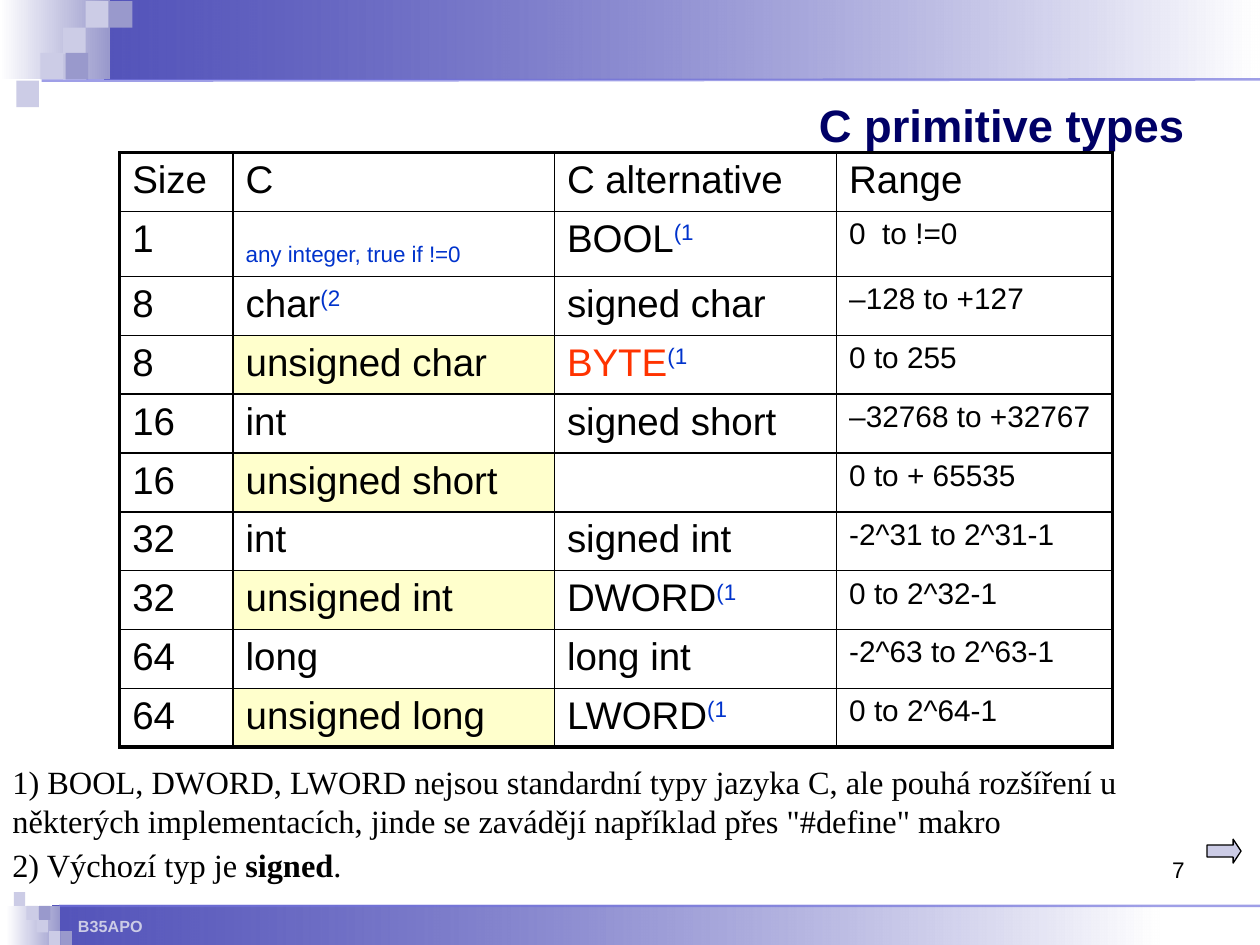
import lxml.etree
import pptx
import pptx.dml.color
import pptx.enum.shapes
import pptx.enum.text
import pptx.oxml.ns
import pptx.util

Inches = pptx.util.Inches
Align = pptx.enum.text.PP_ALIGN
Anchor = pptx.enum.text.MSO_ANCHOR
Preset = pptx.enum.shapes.MSO_SHAPE

COLORS = {
    "ink": "000000", "paper": "FFFFFF", "title": "000066", "note": "0033CC",
    "alert": "FF3300", "highlight": "FFFFCC", "navy": "000099",
    "lilac": "9999CC", "pale": "CCCCE6", "rule": "7272DC",
}
TOP_SQUARES = [
    (0.5, 0.22, "pale"), (0.68, 0.01, "pale"), (0.87, 0.01, "lilac"),
    (0.32, 0.42, "pale"), (0.52, 0.42, "lilac"), (0.13, 0.64, "pale"),
]
BOTTOM_SQUARES = [
    (0.29, 7.29, "pale"), (0.39, 7.39, "pale"), (0.48, 7.39, "lilac"),
    (0.21, 7.19, "pale"), (0.31, 7.19, "lilac"), (0.11, 7.08, "pale"),
]
TYPE_ROWS = [
    ("Size", "C", "C alternative", "Range"),
    ("1", "any integer, true if !=0", "BOOL(1", "0  to !=0"),
    ("8", "char(2", "signed char", "–128 to +127"),
    ("8", "unsigned char", "BYTE(1", "0 to 255"),
    ("16", "int", "signed short", "–32768 to +32767"),
    ("16", "unsigned short", "", "0 to + 65535"),
    ("32", "int", "signed int", "-2^31 to 2^31-1"),
    ("32", "unsigned int", "DWORD(1", "0 to 2^32-1"),
    ("64", "long", "long int", "-2^63 to 2^63-1"),
    ("64", "unsigned long", "LWORD(1", "0 to 2^64-1"),
]
COLUMN_WIDTHS = [0.9, 2.55, 2.24, 2.19]


def rgb(name):
    return pptx.dml.color.RGBColor.from_string(COLORS[name])


def add_element(parent, tag, **attributes):
    return lxml.etree.SubElement(parent, pptx.oxml.ns.qn(tag), attributes)


def make_translucent(color_parent):
    color = next(color_parent.iter(pptx.oxml.ns.qn("a:srgbClr")))
    add_element(color, "a:alpha", val="67000")


class SlideBuilder:
    """Holds the style and the current slide, and adds each kind of element."""

    def __init__(self, presentation):
        self.font = "Arial"
        self.slide = presentation.slides.add_slide(presentation.slide_layouts[5])

    def format_run(self, run, size, color="ink", bold=False, font=None, baseline=0):
        run.font.name = font or self.font
        run.font.size = pptx.util.Pt(size)
        run.font.bold = bold
        run.font.color.rgb = rgb(color)
        if baseline:
            run.font._element.set("baseline", str(baseline * 1000))

    def title(self, text, left, top, width, height):
        shape = self.slide.shapes.title
        shape.left, shape.top = Inches(left), Inches(top)
        shape.width, shape.height = Inches(width), Inches(height)
        frame = shape.text_frame
        frame.text = text
        frame.auto_size = pptx.enum.text.MSO_AUTO_SIZE.NONE
        frame.vertical_anchor = Anchor.MIDDLE
        frame.paragraphs[0].alignment = Align.RIGHT
        self.format_run(frame.paragraphs[0].runs[0], 25.9, "title", True)

    def shape(self, left, top, width, height, fill, preset=Preset.RECTANGLE):
        shape = self.slide.shapes.add_shape(
            preset, Inches(left), Inches(top), Inches(width), Inches(height))
        shape.shadow.inherit = False
        shape.fill.solid()
        shape.fill.fore_color.rgb = rgb(fill)
        shape.line.fill.background()
        return shape

    def gradient(self, left, top, width, height, start, end, translucent=False):
        shape = self.shape(left, top, width, height, start)
        shape.fill.gradient()
        shape.fill.gradient_angle = 0
        for stop, color, position in zip(shape.fill.gradient_stops, (start, end), (0, 1)):
            stop.color.rgb = rgb(color)
            stop.position = position
        if translucent:
            make_translucent(shape._element.spPr)

    def squares(self, squares, width, height):
        for left, top, fill in squares:
            self.shape(left, top, width, height, fill)

    def rule(self, left, start_y, right, end_y):
        line = self.slide.shapes.add_connector(
            pptx.enum.shapes.MSO_CONNECTOR.STRAIGHT,
            Inches(left), Inches(start_y), Inches(right), Inches(end_y))
        line.line.color.rgb = rgb("rule")
        line.line.width = pptx.util.Pt(1.5)
        make_translucent(line._element.spPr)
        add_element(line._element.spPr, "a:effectLst")

    def text(self, left, top, width, height, pieces, size, color="ink", font=None,
             align=Align.LEFT, anchor=Anchor.TOP, wrap=True):
        box = self.slide.shapes.add_textbox(
            Inches(left), Inches(top), Inches(width), Inches(height))
        frame = box.text_frame
        frame.word_wrap = wrap
        frame.vertical_anchor = anchor
        paragraph = frame.paragraphs[0]
        paragraph.alignment = align
        for text, bold in pieces:
            run = paragraph.add_run()
            run.text = text
            self.format_run(run, size, color, bold, font)
        return frame

    def borders(self, cell, thick_sides):
        properties = cell._tc.get_or_add_tcPr()
        for side in "LRTB":
            width = 2.25 if side in thick_sides else 1
            line = add_element(properties, "a:ln" + side, w=str(pptx.util.Pt(width)))
            fill = add_element(line, "a:solidFill")
            add_element(fill, "a:srgbClr", val=COLORS["ink"])

    def cell(self, cell, text, size):
        name, mark, number = text.partition("(")
        paragraph = cell.text_frame.paragraphs[0]
        spacing = add_element(paragraph._p.get_or_add_pPr(), "a:spcBef")
        add_element(spacing, "a:spcPct", val="20000")
        if name.startswith("any"):
            styles = [(name, "note", -25)]
        else:
            styles = [(name, "alert" if name == "BYTE" else "ink", 0),
                      (mark + number, "note", 30)]
        for piece, color, baseline in styles:
            if piece:
                run = paragraph.add_run()
                run.text = piece
                self.format_run(run, size, color, baseline=baseline)

    def table(self, left, top, rows, widths, row_height):
        table = self.slide.shapes.add_table(
            len(rows), len(widths), Inches(left), Inches(top),
            Inches(sum(widths)), Inches(row_height * len(rows))).table
        table.first_row = table.horz_banding = False
        for column, width in zip(table.columns, widths):
            column.width = Inches(width)
        last_row, last_column = len(rows) - 1, len(widths) - 1
        for row, texts in enumerate(rows):
            for column, text in enumerate(texts):
                cell = table.cell(row, column)
                outer = {"L": column == 0, "R": column == last_column,
                         "T": row == 0, "B": row == last_row}
                self.borders(cell, [side for side in outer if outer[side]])
                cell.fill.solid()
                highlighted = text.startswith("unsigned")
                cell.fill.fore_color.rgb = rgb("highlight" if highlighted else "paper")
                self.cell(cell, text, 17 if column == last_column and row else 22)


def main():
    presentation = pptx.Presentation()
    presentation.slide_width, presentation.slide_height = Inches(10), Inches(7.5)
    builder = SlideBuilder(presentation)

    builder.gradient(0.42, 7.19, 8.78, 0.31, "navy", "paper", True)
    builder.gradient(0.83, 0, 9.17, 0.63, "navy", "paper", True)
    builder.gradient(0, 0, 0.87, 0.63, "paper", "lilac")
    builder.squares(TOP_SQUARES, 0.18, 0.21)
    builder.rule(0.33, 0.64, 10, 0.63)
    footer = builder.text(0.57, 7.22, 0.61, 0.24, [("B35APO", True)], 9.2, "pale",
                          align=Align.CENTER, wrap=False)
    footer.margin_left = footer.margin_right = 0
    builder.rule(0.47, 7.19, 10, 7.19)
    builder.gradient(0.05, 7.19, 0.43, 0.31, "paper", "lilac")
    builder.squares(BOTTOM_SQUARES, 0.09, 0.11)

    builder.text(7.17, 6.6, 2.33, 0.46, [("7", False)], 12.9,
                 align=Align.RIGHT, anchor=Anchor.BOTTOM)
    builder.title("C primitive types", 0.5, 0.76, 9, 0.46)
    builder.text(0, 6, 9.79, 0.72, [(
        "1) BOOL, DWORD, LWORD nejsou standardní typy jazyka C, ale pouhá rozšíření u "
        "některých implementacích, jinde se zavádějí například přes \"#define\" makro",
        False)], 18.5, font="Times New Roman")
    arrow = builder.shape(9.58, 6.66, 0.27, 0.19, "pale", Preset.RIGHT_ARROW)
    arrow.adjustments[1] = 0.33
    arrow.line.color.rgb = rgb("ink")
    arrow.line.width = pptx.util.Pt(0.75)
    builder.table(0.95, 1.21, TYPE_ROWS, COLUMN_WIDTHS, 0.46)
    builder.text(0, 6.66, 2.84, 0.41,
                 [("2) Výchozí typ je ", False), ("signed", True), (".", False)],
                 18.5, font="Times New Roman", wrap=False)
    presentation.save("out.pptx")


if __name__ == "__main__":
    main()
